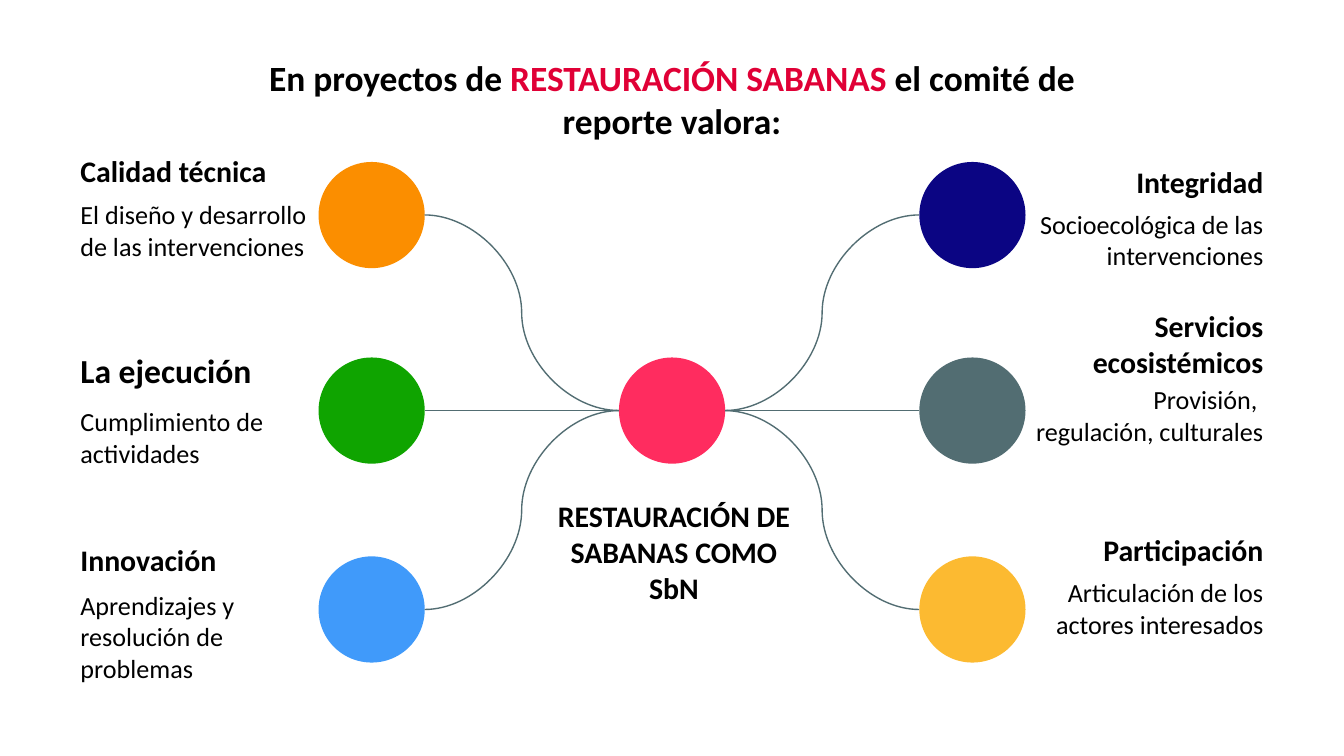
"""Build a hub slide that links six themes to one core."""
from dataclasses import dataclass

from lxml import etree
from pptx import Presentation
from pptx.dml.color import RGBColor
from pptx.enum.shapes import MSO_CONNECTOR, MSO_SHAPE
from pptx.enum.text import MSO_ANCHOR, PP_ALIGN
from pptx.oxml.ns import qn
from pptx.util import Emu, Pt

OVAL = MSO_SHAPE.OVAL
CURVE = MSO_CONNECTOR.CURVE
LEFT, MID, RIGHT = PP_ALIGN.LEFT, PP_ALIGN.CENTER, PP_ALIGN.RIGHT
TOP, CENTER = MSO_ANCHOR.TOP, MSO_ANCHOR.MIDDLE

SCALE = 4572
FONT = "Calibri"
WIDE, HIGH = 2000, 1125
DOT = 158
HALF = DOT // 2
ROWS = (241, 532, 828)
HUB_X, HUB_Y = WIDE // 2 - HALF, ROWS[1]
DOT_X = {"left": 474, "right": WIDE - 474 - DOT}
EDGE = 100
PAD = 20
HEAD_W, HEAD_H = 374, 80
BODY_W, BODY_H = 386, 148
COLORS = {
    "black": "000000",
    "red": "E00036",
    "pink": "FF2C5F",
    "navy": "0B0583",
    "slate": "526D72",
    "gold": "FCBA31",
    "orange": "FB8E00",
    "green": "0FA400",
    "blue": "409AFA",
}


@dataclass(frozen=True)
class Theme:
    """One theme: its side, row, colour, texts and text tops."""
    side: str
    row: int
    color: str
    head: str
    body: str
    head_y: int
    body_y: int
    size: int = 16


THEMES = (
    Theme("left", 0, "orange", "Calidad técnica",
          "El diseño y desarrollo de las intervenciones", 207, 276),
    Theme("right", 0, "navy", "Integridad",
          "Socioecológica de las intervenciones", 224, 290),
    Theme("left", 1, "green", "La ejecución",
          "Cumplimiento de actividades", 501, 584, 18),
    Theme("right", 2, "gold", "Participación",
          "Articulación de los actores interesados", 772, 838),
    Theme("left", 2, "blue", "Innovación",
          "Aprendizajes y resolución de problemas", 786, 857),
    Theme("right", 1, "slate", "Servicios ecosistémicos",
          "Provisión, \nregulación, culturales", 438, 551),
)


def px(val: int) -> Emu:
    """Turn px into EMU."""
    return Emu(val * SCALE)


def rgb(name: str) -> RGBColor:
    """Look up a colour by name."""
    return RGBColor.from_string(COLORS[name])


def add_text(slide, parts, x: int, y: int, w: int, h: int, *, size: int = 14,
             bold: bool = False, align=LEFT, anchor=TOP) -> None:
    """Add a text box from (text, colour) parts."""
    frame = slide.shapes.add_textbox(px(x), px(y), px(w), px(h)).text_frame
    frame.word_wrap = True
    frame.vertical_anchor = anchor
    frame.margin_left = frame.margin_right = px(PAD)
    frame.margin_top = frame.margin_bottom = px(PAD)
    para = frame.paragraphs[0]
    para.alignment = align
    for text, color in parts:
        for num, line in enumerate(text.split("\n")):
            if num:
                para.add_line_break()
            run = para.add_run()
            run.text = line
            run.font.name = FONT
            run.font.size = Pt(size)
            run.font.bold = bold
            run.font.color.rgb = rgb(color)


def add_dot(slide, x: int, y: int, color: str) -> None:
    """Add a plain filled circle."""
    dot = slide.shapes.add_shape(OVAL, px(x), px(y), px(DOT), px(DOT))
    dot.shadow.inherit = False
    dot.fill.solid()
    dot.fill.fore_color.rgb = rgb(color)
    dot.line.fill.background()


def add_link(slide, theme: Theme) -> None:
    """Add a thin curved connector from the hub to a theme's circle."""
    left = theme.side == "left"
    start = HUB_X if left else HUB_X + DOT
    end = DOT_X[theme.side] + (DOT if left else 0)
    link = slide.shapes.add_connector(CURVE, px(start), px(HUB_Y + HALF),
                                      px(end), px(ROWS[theme.row] + HALF))
    link.line.color.rgb = rgb("slate")
    link.line.width = Pt(0.75)
    etree.SubElement(link._element.spPr, qn("a:effectLst"))


def add_label(slide, theme: Theme) -> None:
    """Add a theme's heading and body."""
    left = theme.side == "left"
    align = LEFT if left else RIGHT
    head_x = EDGE if left else WIDE - EDGE - HEAD_W
    body_x = EDGE if left else WIDE - EDGE - BODY_W
    add_text(slide, [(theme.head, "black")], head_x, theme.head_y, HEAD_W,
             HEAD_H, size=theme.size, bold=True, align=align)
    add_text(slide, [(theme.body, "black")], body_x, theme.body_y, BODY_W,
             BODY_H, align=align)


def main() -> None:
    """Build and save the slide."""
    deck = Presentation()
    deck.slide_width, deck.slide_height = px(WIDE), px(HIGH)
    slide = deck.slides.add_slide(deck.slide_layouts[6])
    add_dot(slide, HUB_X, HUB_Y, "pink")
    for theme in THEMES:
        add_dot(slide, DOT_X[theme.side], ROWS[theme.row], theme.color)
    for theme in THEMES:
        add_link(slide, theme)
    title = [("En proyectos de ", "black"), ("RESTAURACIÓN SABANAS ", "red"),
             ("el comité de reporte valora:", "black")]
    add_text(slide, title, 349, 106, 1302, 82, size=19, bold=True, align=MID,
             anchor=CENTER)
    for theme in THEMES:
        add_label(slide, theme)
    add_text(slide, [("RESTAURACIÓN DE SABANAS COMO SbN", "black")],
             802, 721, 402, BODY_H, size=16, bold=True, align=MID)
    deck.save("out.pptx")


if __name__ == "__main__":
    main()
